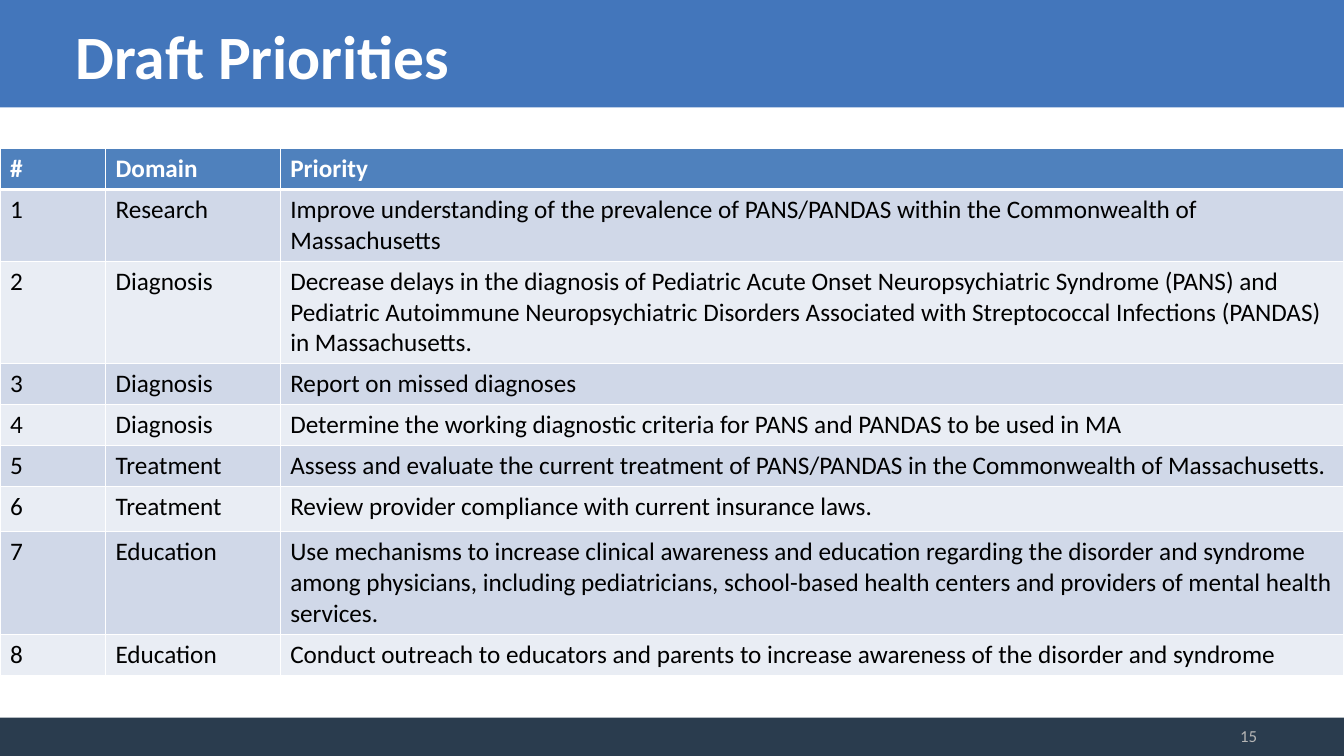
import pptx
import pptx.dml.color
import pptx.enum.shapes
import pptx.enum.text
import pptx.oxml
import pptx.oxml.ns
import pptx.util

Pt = pptx.util.Pt
ALIGN = pptx.enum.text.PP_ALIGN
MIDDLE = pptx.enum.text.MSO_ANCHOR.MIDDLE
WIDTH, HEIGHT = 960, 540

PRIORITIES = [
    ("Research", "Improve understanding of the prevalence of PANS/PANDAS within the Commonwealth of Massachusetts"),
    ("Diagnosis", "Decrease delays in the diagnosis of Pediatric Acute Onset Neuropsychiatric Syndrome (PANS) and "
                  "Pediatric Autoimmune Neuropsychiatric Disorders Associated with Streptococcal Infections (PANDAS) "
                  "in Massachusetts."),
    ("Diagnosis", "Report on missed diagnoses"),
    ("Diagnosis", "Determine the working diagnostic criteria for PANS and PANDAS to be used in MA"),
    ("Treatment", "Assess and evaluate the current treatment of PANS/PANDAS in the Commonwealth of Massachusetts."),
    ("Treatment", "Review provider compliance with current insurance laws."),
    ("Education", "Use mechanisms to increase clinical awareness and education regarding the disorder and syndrome "
                  "among physicians, including pediatricians, school-based health centers and providers of mental "
                  "health services."),
    ("Education", "Conduct outreach to educators and parents to increase awareness of the disorder and syndrome"),
]


def color(value):
    return pptx.dml.color.RGBColor.from_string(value)


class SlideBuilder:
    font = "Calibri"
    white = "FFFFFF"
    header_fill = "4F81BD"
    row_fills = ("D0D8E8", "E9EDF4")

    def __init__(self, page):
        self.page = page

    def set_text(self, frame, text, size, ink, bold=False, align=ALIGN.LEFT):
        frame.text = text
        paragraph = frame.paragraphs[0]
        paragraph.alignment = align
        for span in paragraph.runs:
            span.font.name = self.font
            span.font.size = Pt(size)
            span.font.bold = bold
            span.font.color.rgb = color(ink)

    def band(self, top, height, fill):
        box = self.page.shapes.add_shape(
            pptx.enum.shapes.MSO_SHAPE.RECTANGLE, 0, Pt(top), Pt(WIDTH), Pt(height))
        box.shadow.inherit = False
        box.fill.solid()
        box.fill.fore_color.rgb = color(fill)
        box.line.fill.background()

    def title(self, text, left, top, width, height):
        box = self.page.shapes.title
        box.left, box.top, box.width, box.height = Pt(left), Pt(top), Pt(width), Pt(height)
        box.text_frame.vertical_anchor = MIDDLE
        self.set_text(box.text_frame, text, 44, self.white, bold=True)
        self.page.shapes._spTree.append(box._element)

    def label(self, text, left, top, width, height):
        box = self.page.shapes.add_textbox(Pt(left), Pt(top), Pt(width), Pt(height))
        box.text_frame.word_wrap = True
        box.text_frame.vertical_anchor = MIDDLE
        self.set_text(box.text_frame, text, 12, "B5B5B5", align=ALIGN.RIGHT)

    def borders(self, cell, top, bottom):
        properties = cell._tc.get_or_add_tcPr()
        widths = {"lnL": 1, "lnR": 1, "lnT": top, "lnB": bottom}
        for index, (side, width) in enumerate(widths.items()):
            properties.insert(index, pptx.oxml.parse_xml(
                f'<a:{side} {pptx.oxml.ns.nsdecls("a")} w="{Pt(width)}"><a:solidFill>'
                f'<a:srgbClr val="{self.white}"/></a:solidFill></a:{side}>'))

    def table(self, rows, top, height, column_widths, row_heights):
        frame = self.page.shapes.add_table(
            len(rows), len(column_widths), 0, Pt(top), Pt(WIDTH), Pt(height))
        grid = frame.table
        for column, width in zip(grid.columns, column_widths):
            column.width = Pt(width)
        for row, row_height in zip(grid.rows, row_heights):
            row.height = Pt(row_height)
        frame.height = Pt(height)
        for number, values in enumerate(rows):
            header = number == 0
            fill = self.header_fill if header else self.row_fills[(number - 1) % 2]
            ink = self.white if header else "000000"
            for column, value in enumerate(values):
                cell = grid.cell(number, column)
                self.set_text(cell.text_frame, value, 18, ink, bold=header)
                cell.fill.solid()
                cell.fill.fore_color.rgb = color(fill)
                self.borders(cell, 3 if number == 1 else 1, 3 if header else 1)


def main():
    deck = pptx.Presentation()
    deck.slide_width, deck.slide_height = Pt(WIDTH), Pt(HEIGHT)
    builder = SlideBuilder(deck.slides.add_slide(deck.slide_layouts[5]))
    builder.band(0, 76.8, "4376BB")
    builder.band(512.6, 27.4, "2A3C4E")
    builder.title("Draft Priorities", 46.8, 4.3, 864, 69.1)
    rows = [("#", "Domain", "Priority")]
    rows += [(str(number), *entry) for number, entry in enumerate(PRIORITIES, 1)]
    row_heights = [29.2] * 6 + [32.6, 43.9, 29.2]
    builder.table(rows, 106.2, 373, (75.4, 124.8, 759.8), row_heights)
    builder.label("15", 689.8, 511.2, 215.3, 28.8)
    deck.save("out.pptx")


if __name__ == "__main__":
    main()
